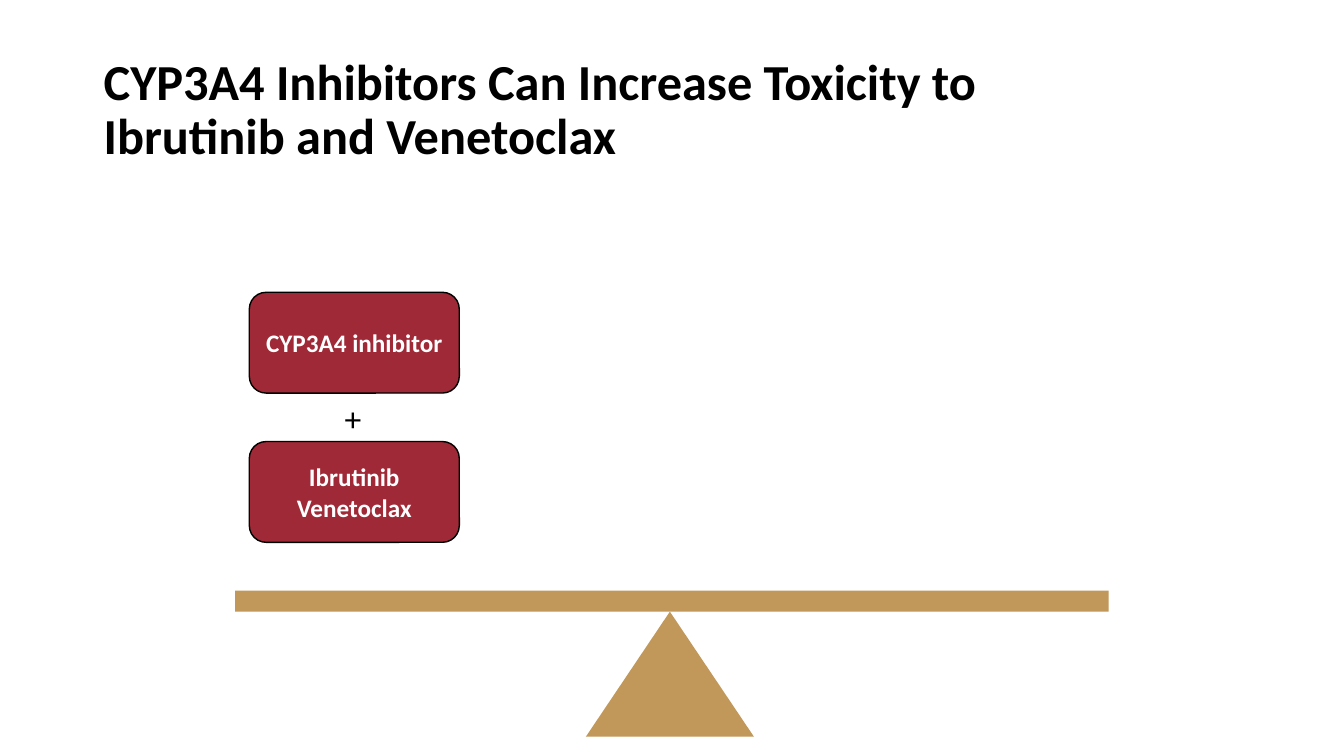
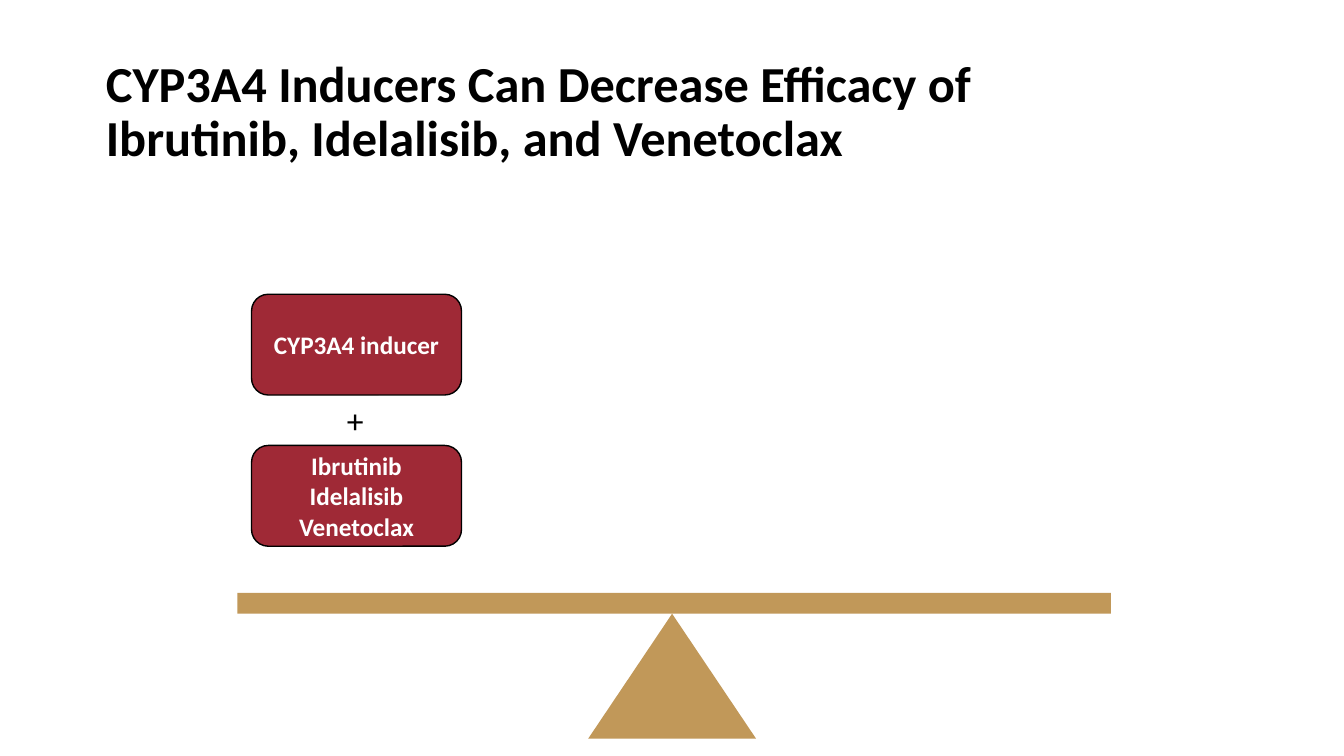
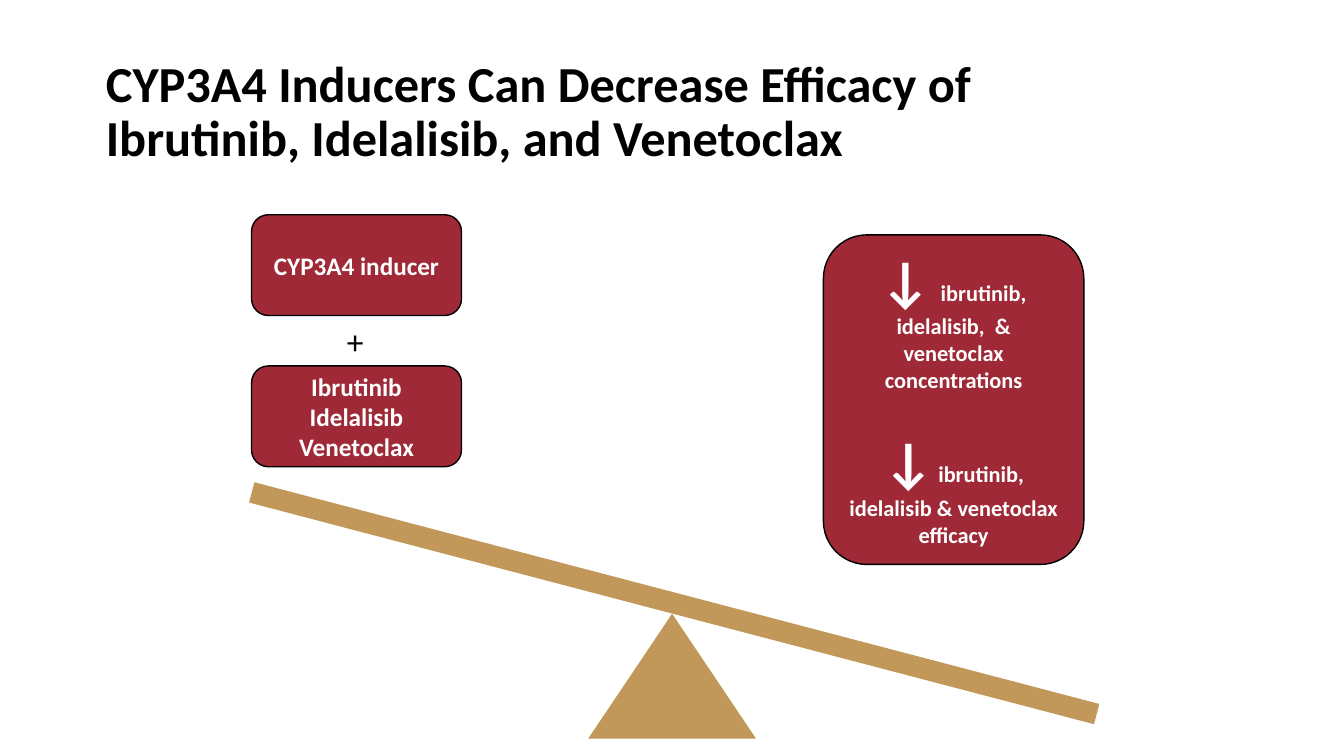
from dataclasses import dataclass

from pptx import Presentation
from pptx.dml.color import RGBColor
from pptx.enum import shapes, text
from pptx.util import Pt


@dataclass(frozen=True)
class Theme:
    crimson: RGBColor = RGBColor(0x9F, 0x29, 0x36)
    gold: RGBColor = RGBColor(0xC1, 0x98, 0x59)
    black: RGBColor = RGBColor(0, 0, 0)
    white: RGBColor = RGBColor(255, 255, 255)
    font: str = "Calibri"
    spacer_font: str = "Arial"
    title_size: int = 36
    arrow_size: int = 40
    plus_size: int = 24
    card_size: int = 18
    detail_size: int = 16
    gap_size: int = 14


@dataclass(frozen=True)
class Box:
    left: float
    top: float
    width: float
    height: float

    def inside(self, left, top, width, height):
        return Box(self.left + left, self.top + top, width, height)

    def lengths(self):
        return [Pt(round(value, 2)) for value in (self.left, self.top, self.width, self.height)]


THEME = Theme()
SLIDE_WIDTH, SLIDE_HEIGHT = 960, 540
CARD_WIDTH, CARD_HEIGHT = 150, 72
BEAM_WIDTH, BEAM_HEIGHT = 624, 15
PIVOT_WIDTH, PIVOT_HEIGHT = 120, 89.3


def write_text(frame, paragraphs, size=THEME.card_size, color=THEME.white, bold=True,
               align=text.PP_ALIGN.CENTER, anchor=text.MSO_ANCHOR.MIDDLE,
               wrap=True, line_spacing=None, gap=0):
    frame.word_wrap = wrap
    frame.vertical_anchor = anchor
    for index, runs in enumerate(paragraphs):
        paragraph = frame.add_paragraph() if index else frame.paragraphs[0]
        paragraph.alignment = align
        paragraph.space_before = Pt(gap if index else 0)
        if line_spacing:
            paragraph.line_spacing = line_spacing
        if isinstance(runs, str):
            runs = [(runs, size, THEME.font)]
        for content, run_size, font_name in runs:
            for line_index, line in enumerate(content.split("\n")):
                if line_index:
                    paragraph.add_line_break()
                run = paragraph.add_run()
                run.text = line
                run.font.name = font_name
                run.font.size = Pt(run_size)
                run.font.bold = bold
                run.font.color.rgb = color


def add_block(slide, kind, box, fill, outline=None):
    shape = slide.shapes.add_shape(kind, *box.lengths())
    shape.shadow.inherit = False
    shape.fill.solid()
    shape.fill.fore_color.rgb = fill
    if outline is None:
        shape.line.fill.background()
    else:
        shape.line.color.rgb = outline
        shape.line.width = Pt(1)
    return shape


def add_card(slide, box, paragraphs, **text_format):
    card = add_block(slide, shapes.MSO_SHAPE.ROUNDED_RECTANGLE, box, THEME.crimson, THEME.black)
    write_text(card.text_frame, paragraphs, **text_format)
    return card


def add_title(slide, box, title):
    placeholder = slide.shapes.title
    placeholder.left, placeholder.top, placeholder.width, placeholder.height = box.lengths()
    placeholder.text_frame.auto_size = text.MSO_AUTO_SIZE.NONE
    write_text(placeholder.text_frame, [title], size=THEME.title_size, color=THEME.black,
               align=text.PP_ALIGN.LEFT, line_spacing=0.9)


def add_seesaw(slide, box, tilt):
    pivot = box.inside(250.5, BEAM_HEIGHT, PIVOT_WIDTH, PIVOT_HEIGHT)
    add_block(slide, shapes.MSO_SHAPE.ISOSCELES_TRIANGLE, pivot, THEME.gold)
    beam = box.inside(0, 0, BEAM_WIDTH, BEAM_HEIGHT)
    add_block(slide, shapes.MSO_SHAPE.RECTANGLE, beam, THEME.gold).rotation = tilt


def add_drug_stack(slide, box, modifier, drugs):
    add_card(slide, box.inside(0, 0, CARD_WIDTH, CARD_HEIGHT), [modifier])
    add_card(slide, box.inside(0, box.height - CARD_HEIGHT, CARD_WIDTH, CARD_HEIGHT), drugs)
    plus = slide.shapes.add_textbox(*box.inside(61, CARD_HEIGHT, 29, 36).lengths())
    write_text(plus.text_frame, ["+"], size=THEME.plus_size, color=THEME.black, bold=False,
               align=text.PP_ALIGN.LEFT, anchor=text.MSO_ANCHOR.TOP, wrap=False)


def add_outcome(slide, box, effects):
    paragraphs = [
        [("↓", THEME.arrow_size, THEME.font), (" ", *spacer), (effect, THEME.detail_size, THEME.font)]
        for effect, spacer in effects
    ]
    card = add_card(slide, box, paragraphs, gap=24)
    card.text_frame.margin_bottom = Pt(8)


def build_balance_slide(presentation, box, title, modifier, drugs,
                        stack_top, stack_gap, tilt=0, effects=()):
    slide = presentation.slides.add_slide(presentation.slide_layouts[5])
    add_title(slide, box.inside(0, 0, 751, 82.8), title)
    add_seesaw(slide, box.inside(101.2, 383.8, BEAM_WIDTH, BEAM_HEIGHT + PIVOT_HEIGHT), tilt)
    stack = box.inside(111.3, stack_top, CARD_WIDTH, 2 * CARD_HEIGHT + stack_gap)
    add_drug_stack(slide, stack, modifier, drugs)
    if effects:
        add_outcome(slide, box.inside(519.8, 128.2, 186, 235.4), effects)


def main():
    presentation = Presentation()
    presentation.slide_width, presentation.slide_height = Pt(SLIDE_WIDTH), Pt(SLIDE_HEIGHT)

    build_balance_slide(
        presentation, Box(66.8, 38.1, 825, 489),
        "CYP3A4 Inhibitors Can Increase Toxicity to\nIbrutinib and Venetoclax",
        "CYP3A4 inhibitor", ["Ibrutinib", "Venetoclax"], stack_top=170.7, stack_gap=34.6)

    inducer_box = Box(68.4, 39.6, 825, 489)
    inducer = {
        "title": "CYP3A4 Inducers Can Decrease Efficacy of\nIbrutinib, Idelalisib, and Venetoclax",
        "modifier": "CYP3A4 inducer",
        "drugs": ["Ibrutinib", "Idelalisib", "Venetoclax"],
        "stack_gap": 36,
    }
    effects = [
        ("ibrutinib, idelalisib,  & venetoclax concentrations",
         (THEME.plus_size, THEME.spacer_font)),
        ("ibrutinib, idelalisib & venetoclax efficacy", (THEME.gap_size, THEME.font)),
    ]
    build_balance_slide(presentation, inducer_box, stack_top=170.6, **inducer)
    build_balance_slide(presentation, inducer_box, stack_top=113.8, tilt=14.7,
                        effects=effects, **inducer)

    presentation.save("out.pptx")


if __name__ == "__main__":
    main()
